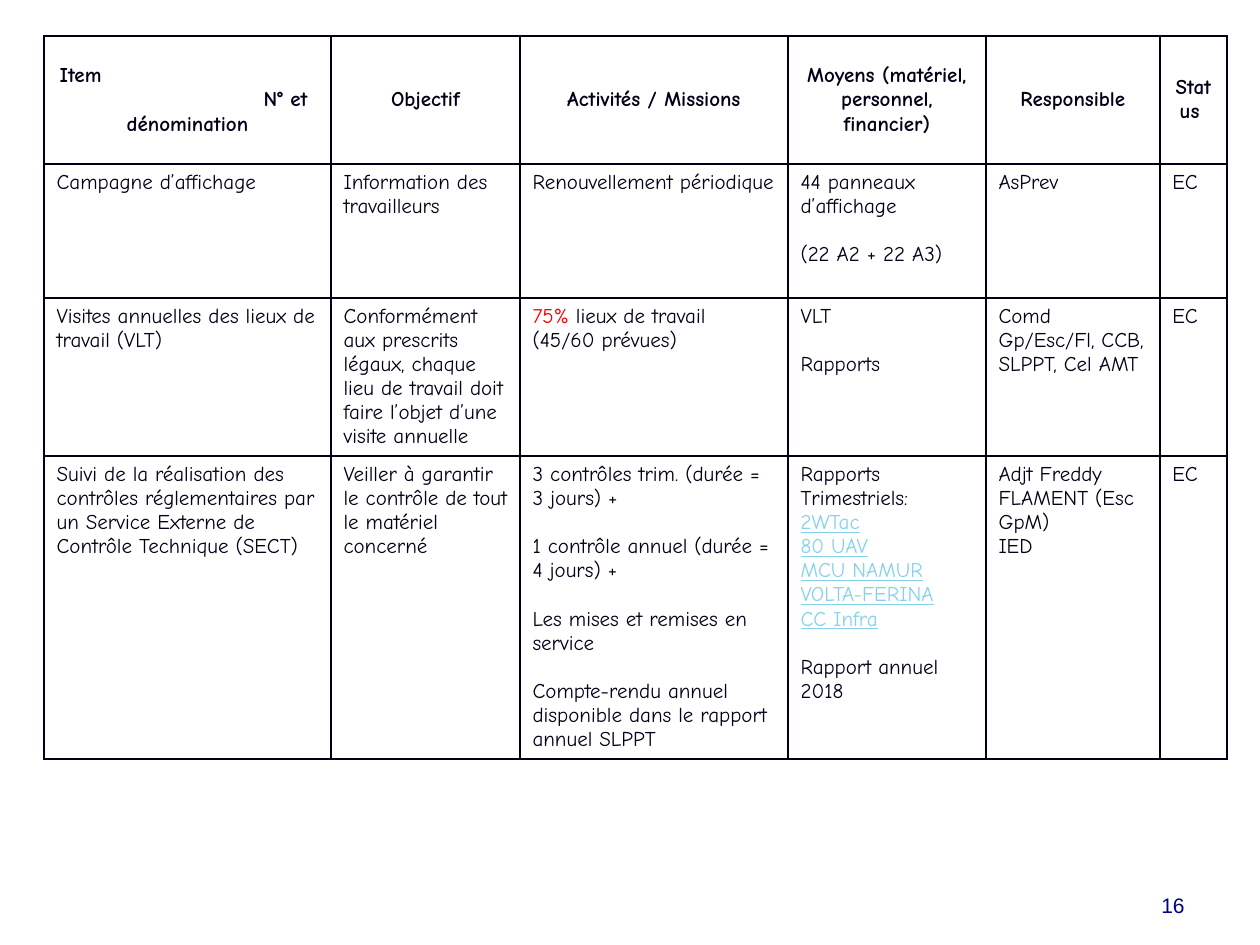
from dataclasses import dataclass

import pptx
import pptx.dml.color
import pptx.enum.text
import pptx.oxml
import pptx.oxml.ns
import pptx.util

EMU_PER_PX = 914400 / 126
ALIGN = pptx.enum.text.PP_ALIGN
ANCHOR = pptx.enum.text.MSO_ANCHOR


@dataclass(frozen=True)
class Theme:
    ink: str = "000018"
    alert: str = "FF0000"
    link: str = "86D1EC"
    number: str = "000080"
    table_font: str = "Comic Neue"
    number_font: str = "Arial"
    size: float = 12
    gap: float = 13.8
    border: float = 1


THEME = Theme()


@dataclass(frozen=True)
class Span:
    text: str
    color: str = THEME.ink
    underline: bool = False
    bold: bool = False
    font: str = THEME.table_font


@dataclass(frozen=True)
class Line:
    spans: tuple[Span, ...]
    gap: bool = False
    align: ALIGN = ALIGN.LEFT
    indent: int = 0


@dataclass(frozen=True)
class Row:
    height: int
    cells: tuple[tuple[Line, ...], ...]
    anchor: ANCHOR = ANCHOR.TOP


def px(value: int) -> int:
    return pptx.util.Emu(round(value * EMU_PER_PX))


def heading(text: str, align: ALIGN = ALIGN.CENTER, indent: int = 0) -> Line:
    return Line((Span(text, bold=True),), align=align, indent=indent)


def body(text: str, gap: bool = False) -> Line:
    return Line((Span(text),), gap)


def link(text: str) -> Line:
    return Line((Span(text, THEME.link, underline=True),))


COLUMNS = (287, 189, 268, 198, 174, 67)
ROWS = (
    Row(128, (
        (heading("Item", ALIGN.LEFT, 3), heading("N° et", ALIGN.LEFT, 207), heading("dénomination")),
        (heading("Objectif"),),
        (heading("Activités / Missions"),),
        (heading("Moyens (matériel, personnel, financier)"),),
        (heading("Responsible"),),
        (heading("Status "),),
    ), ANCHOR.MIDDLE),
    Row(134, (
        (body("Campagne d’affichage"),),
        (body("Information des travailleurs"),),
        (body("Renouvellement périodique"),),
        (body("44 panneaux d’affichage"), body("(22 A2 + 22 A3)", gap=True)),
        (body("AsPrev"),),
        (body("EC"),),
    )),
    Row(158, (
        (body("Visites annuelles des lieux de travail (VLT)"),),
        (body("Conformément aux prescrits légaux, chaque lieu de travail doit "
              "faire l’objet d’une visite annuelle"),),
        (Line((Span("75%", THEME.alert), Span(" lieux de travail"))), body("(45/60 prévues)")),
        (body("VLT"), body("Rapports", gap=True)),
        (body("Comd Gp/Esc/Fl, CCB, SLPPT, Cel AMT"),),
        (body("EC"),),
    )),
    Row(303, (
        (body("Suivi de la réalisation des contrôles réglementaires par "
              "un Service Externe de Contrôle Technique (SECT)"),),
        (body("Veiller à garantir le contrôle de tout le matériel concerné"),),
        (body("3 contrôles trim. (durée = 3 jours) +"),
         body("1 contrôle annuel (durée = 4 jours) +", gap=True),
         body("Les mises et remises en service", gap=True),
         body("Compte-rendu annuel disponible dans le rapport annuel SLPPT", gap=True)),
        (body("Rapports"), body("Trimestriels:"), link("2WTac"), link("80 UAV"),
         link("MCU NAMUR"), link("VOLTA-FERINA"), link("CC Infra"),
         body("Rapport annuel 2018", gap=True)),
        (body("Adjt Freddy FLAMENT (Esc GpM)"), body("IED")),
        (body("EC"),),
    )),
)


def write_lines(frame: pptx.text.text.TextFrame, lines: tuple[Line, ...]) -> None:
    for index, line in enumerate(lines):
        paragraph = frame.paragraphs[0] if index == 0 else frame.add_paragraph()
        spacing = THEME.gap if line.gap else 0
        paragraph_format = {"alignment": line.align, "space_before": pptx.util.Pt(spacing)}
        for name, value in paragraph_format.items():
            setattr(paragraph, name, value)
        if line.indent:
            paragraph._p.get_or_add_pPr().set("marL", str(px(line.indent)))
        for span in line.spans:
            run = paragraph.add_run()
            run.text = span.text
            font_format = {
                "name": span.font,
                "size": pptx.util.Pt(THEME.size),
                "bold": span.bold,
                "underline": span.underline,
            }
            for name, value in font_format.items():
                setattr(run.font, name, value)
            run.font.color.rgb = pptx.dml.color.RGBColor.from_string(span.color)


def draw_borders(cell: pptx.table._Cell) -> None:
    properties = cell._tc.get_or_add_tcPr()
    for index, side in enumerate(("lnL", "lnR", "lnT", "lnB")):
        border = pptx.oxml.parse_xml(
            f'<a:{side} {pptx.oxml.ns.nsdecls("a")} w="{pptx.util.Pt(THEME.border)}">'
            f'<a:solidFill><a:srgbClr val="{THEME.ink}"/></a:solidFill></a:{side}>'
        )
        properties.insert(index, border)


def draw_table(slide: pptx.slide.Slide, left: int, top: int) -> None:
    height = sum(row.height for row in ROWS)
    shape = slide.shapes.add_table(
        len(ROWS), len(COLUMNS), px(left), px(top), px(sum(COLUMNS)), px(height)
    )
    table = shape.table
    for name, value in {"first_row": False, "horz_banding": False}.items():
        setattr(table, name, value)
    for column, width in zip(table.columns, COLUMNS):
        column.width = px(width)
    for table_row, row in zip(table.rows, ROWS):
        table_row.height = px(row.height)
        for cell, lines in zip(table_row.cells, row.cells):
            cell.vertical_anchor = row.anchor
            cell.fill.background()
            draw_borders(cell)
            write_lines(cell.text_frame, lines)


def draw_slide_number(slide: pptx.slide.Slide, text: str) -> None:
    shape = slide.shapes.add_textbox(px(903), px(861), px(294), px(63))
    frame_format = {"word_wrap": True, "vertical_anchor": ANCHOR.BOTTOM}
    for name, value in frame_format.items():
        setattr(shape.text_frame, name, value)
    number = Span(text, THEME.number, font=THEME.number_font)
    write_lines(shape.text_frame, (Line((number,), align=ALIGN.RIGHT),))


def main() -> None:
    presentation = pptx.Presentation()
    presentation.slide_width = px(1260)
    presentation.slide_height = px(945)
    slide = presentation.slides.add_slide(presentation.slide_layouts[6])
    draw_table(slide, 44, 36)
    draw_slide_number(slide, "16")
    presentation.save("out.pptx")


if __name__ == "__main__":
    main()
